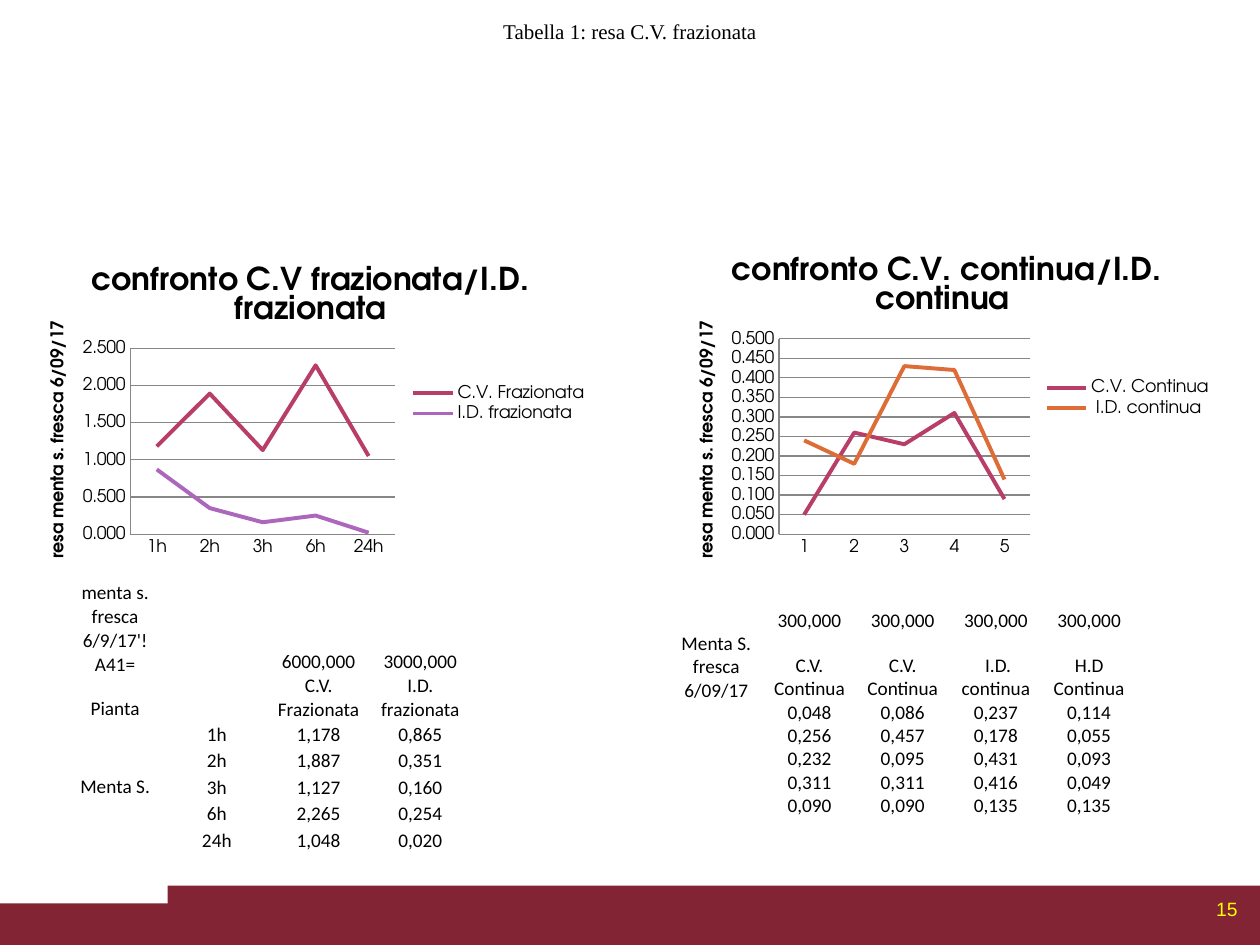
from dataclasses import dataclass

from lxml import etree
from pptx import Presentation
from pptx.chart.data import CategoryChartData
from pptx.dml.color import RGBColor
from pptx.enum.chart import XL_CHART_TYPE, XL_LEGEND_POSITION, XL_TICK_MARK
from pptx.enum.shapes import MSO_SHAPE
from pptx.enum.text import MSO_ANCHOR, PP_ALIGN
from pptx.oxml import parse_xml
from pptx.oxml.ns import nsdecls, qn
from pptx.util import Inches, Pt

LINE = XL_CHART_TYPE.LINE
LEGEND_RIGHT = XL_LEGEND_POSITION.RIGHT
NO_TICK = XL_TICK_MARK.NONE
RECTANGLE = MSO_SHAPE.RECTANGLE
TOP, MIDDLE, BOTTOM = MSO_ANCHOR.TOP, MSO_ANCHOR.MIDDLE, MSO_ANCHOR.BOTTOM
CENTER, RIGHT = PP_ALIGN.CENTER, PP_ALIGN.RIGHT
WIDTH, HEIGHT = Inches(10), Inches(7.5)
COLUMNS, ROWS = 100, 75


@dataclass(frozen=True)
class Theme:
    """Colours, fonts and type sizes of the slide."""
    ink: str = "000000"
    band: str = "822433"
    number: str = "FFFF00"
    grid: str = "878787"
    steam: str = "B83D68"
    batch: str = "AC66BB"
    continuous: str = "DE6C36"
    caption_font: str = "Times New Roman"
    number_font: str = "Arial"
    table_font: str = "Calibri"
    chart_font: str = "TeX Gyre Adventor"
    caption_size: int = 12
    body_size: int = 11
    chart_size: int = 10
    chart_title_size: int = 18


THEME = Theme()


def place(left, top, width, height):
    """Turn grid columns and rows into slide lengths."""
    return (int(WIDTH * left / COLUMNS), int(HEIGHT * top / ROWS),
            int(WIDTH * width / COLUMNS), int(HEIGHT * height / ROWS))


def style_font(font, name, size, color, bold=False):
    """Give a font its face, size, colour and weight."""
    font.name, font.size, font.bold = name, Pt(size), bold
    font.color.rgb = RGBColor.from_string(color)


def style_line(line, color, width):
    """Give a line its colour and width in points."""
    line.color.rgb = RGBColor.from_string(color)
    line.width = Pt(width)


def add_label(slide, box, text, font, size, color, align, anchor, wrap):
    """Place a one-paragraph text box."""
    frame = slide.shapes.add_textbox(*place(*box)).text_frame
    frame.word_wrap, frame.vertical_anchor = wrap, anchor
    paragraph = frame.paragraphs[0]
    paragraph.text, paragraph.alignment = text, align
    style_font(paragraph.font, font, size, color)


def add_footer(slide, box, step, rise, number):
    """Place the stepped band and the slide number."""
    left, top, width, height = box
    steps = ((left, top + rise, width, height - rise),
             (left + step, top, width - step, height))
    for bar_box in steps:
        bar = slide.shapes.add_shape(RECTANGLE, *place(*bar_box))
        bar.shadow.inherit = False
        bar.fill.solid()
        bar.fill.fore_color.rgb = RGBColor.from_string(THEME.band)
        bar.line.fill.background()
    add_label(slide, (78.4, top + 0.4, 20.8, height - 0.4), number, THEME.number_font,
              THEME.body_size, THEME.number, RIGHT, TOP, True)


def write_chart_title(frame, text, size):
    """Write a bold title on a chart or an axis."""
    paragraph = frame.paragraphs[0]
    paragraph.text = text
    style_font(paragraph.font, THEME.chart_font, size, THEME.ink, True)


def set_plot_layout(chart, percentages):
    """Fix the inner plot area as percentages of the chart."""
    plot_area = chart._chartSpace.chart.plotArea
    for old in plot_area.findall(qn("c:layout")):
        plot_area.remove(old)
    layout = parse_xml(f"<c:layout {nsdecls('c')}><c:manualLayout/></c:layout>")
    shares = [percentage / 100 for percentage in percentages]
    settings = (("layoutTarget", "inner"), ("xMode", "edge"), ("yMode", "edge"),
                *zip("xywh", shares))
    for name, value in settings:
        etree.SubElement(layout[0], qn(f"c:{name}")).set("val", str(value))
    plot_area.insert(0, layout)


def add_yield_chart(slide, box, title, categories, series, top_value, step, plot):
    """Place a line chart comparing two yields."""
    data = CategoryChartData(number_format="0.000")
    data.categories = categories
    for name, values, _ in series:
        data.add_series(name, values)
    chart = slide.shapes.add_chart(LINE, *place(*box), data).chart
    style_font(chart.font, THEME.chart_font, THEME.chart_size, THEME.ink)
    write_chart_title(chart.chart_title.text_frame, title, THEME.chart_title_size)
    chart.has_legend = True
    chart.legend.position = LEGEND_RIGHT
    chart.legend.include_in_layout = False
    chart.plots[0].vary_by_categories = False
    for line, (_, _, color) in zip(chart.plots[0].series, series):
        line.smooth = False
        style_line(line.format.line, color, 2.25)
    value_axis = chart.value_axis
    value_axis.minimum_scale, value_axis.maximum_scale = 0, top_value
    value_axis.major_unit = step
    value_axis.tick_labels.number_format = "0.000"
    value_axis.tick_labels.number_format_is_linked = False
    style_line(value_axis.major_gridlines.format.line, THEME.grid, 0.75)
    for axis in (chart.category_axis, value_axis):
        axis.major_tick_mark = axis.minor_tick_mark = NO_TICK
        style_line(axis.format.line, THEME.grid, 0.75)
    axis_frame = value_axis.axis_title.text_frame
    write_chart_title(axis_frame, "resa menta s. fresca 6/09/17", THEME.chart_size)
    axis_frame._txBody.bodyPr.set("rot", "-5400000")
    set_plot_layout(chart, plot)


def write_cell(cell, text):
    """Fill in one plain table cell."""
    cell.fill.background()
    cell.vertical_anchor = BOTTOM
    cell.margin_left = cell.margin_right = cell.margin_top = cell.margin_bottom = 0
    paragraph = cell.text_frame.paragraphs[0]
    paragraph.alignment = CENTER
    if text:
        paragraph.text = text
    else:
        end = etree.SubElement(paragraph._p, qn("a:endParaRPr"))
        end.set("sz", str(THEME.body_size * 100))
    style_font(paragraph.font, THEME.table_font, THEME.body_size, THEME.ink)


def add_yield_table(slide, box, rows, row_heights):
    """Place a borderless table of yields and return it."""
    left, top, width, _ = box
    frame = slide.shapes.add_table(len(rows), len(rows[0]),
                                   *place(left, top, width, sum(row_heights)))
    table = frame.table
    table.first_row = table.horz_banding = False
    for row, height, texts in zip(table.rows, row_heights, rows):
        row.height = int(HEIGHT * height / ROWS)
        for cell, text in zip(row.cells, texts):
            write_cell(cell, text)
    return table


def build_slide(presentation):
    """Build the comparison of fractional and continuous yields."""
    slide = presentation.slides.add_slide(presentation.slide_layouts[6])
    add_footer(slide, (0, 70.3, COLUMNS, 4.7), 13.3, 1.4, "15")
    add_label(slide, (0, 0, COLUMNS, 5), "Tabella 1: resa C.V. frazionata", THEME.caption_font,
              THEME.caption_size, THEME.ink, CENTER, MIDDLE, False)
    add_yield_chart(
        slide, (1.65, 19.4, 46, 25.2), "confronto C.V frazionata/I.D. frazionata",
        ("1h", "2h", "3h", "6h", "24h"),
        (("C.V. Frazionata", (1.18, 1.89, 1.13, 2.27, 1.05), THEME.steam),
         ("I.D. frazionata", (0.87, 0.35, 0.16, 0.25, 0.02), THEME.batch)),
        2.5, 0.5, (18.9, 32.7, 45.7, 58.6))
    add_yield_chart(
        slide, (53.1, 18.6, 44.1, 26), "confronto C.V. continua/I.D. continua ",
        ("1", "2", "3", "4", "5"),
        (("C.V. Continua", (0.05, 0.26, 0.23, 0.31, 0.09), THEME.steam),
         (" I.D. continua", (0.24, 0.18, 0.43, 0.42, 0.14), THEME.continuous)),
        0.5, 0.05, (19.8, 31.9, 45.1, 59.7))
    fractional = add_yield_table(slide, (5.1, 46.15, 32.3, 21.4), (
        ("menta s. fresca 6/9/17'!A41=", "", "6000,000", "3000,000"),
        ("Pianta", "", "C.V. Frazionata", "I.D. frazionata"),
        ("Menta S.", "1h", "1,178", "0,865"),
        ("", "2h", "1,887", "0,351"),
        ("", "3h", "1,127", "0,160"),
        ("", "6h", "2,265", "0,254"),
        ("", "24h", "1,048", "0,020")), [2.1] * 7)
    plant = fractional.cell(2, 0)
    plant.merge(fractional.cell(6, 0))
    plant.vertical_anchor = MIDDLE
    add_yield_table(slide, (53.15, 48.3, 37, 18.3), (
        ("", "300,000", "300,000", "300,000", "300,000"),
        ("Menta S. fresca 6/09/17", "C.V. Continua", "C.V. Continua", " I.D. continua",
         "H.D Continua"),
        ("", "0,048", "0,086", "0,237", "0,114"),
        ("", "0,256", "0,457", "0,178", "0,055"),
        ("", "0,232", "0,095", "0,431", "0,093"),
        ("", "0,311", "0,311", "0,416", "0,049"),
        ("", "0,090", "0,090", "0,135", "0,135"),
        ("",) * 5), [1.6, 2.8] + [1.6] * 6)


def main():
    """Create and save the presentation."""
    presentation = Presentation()
    presentation.slide_width, presentation.slide_height = WIDTH, HEIGHT
    build_slide(presentation)
    presentation.save("out.pptx")


if __name__ == "__main__":
    main()
